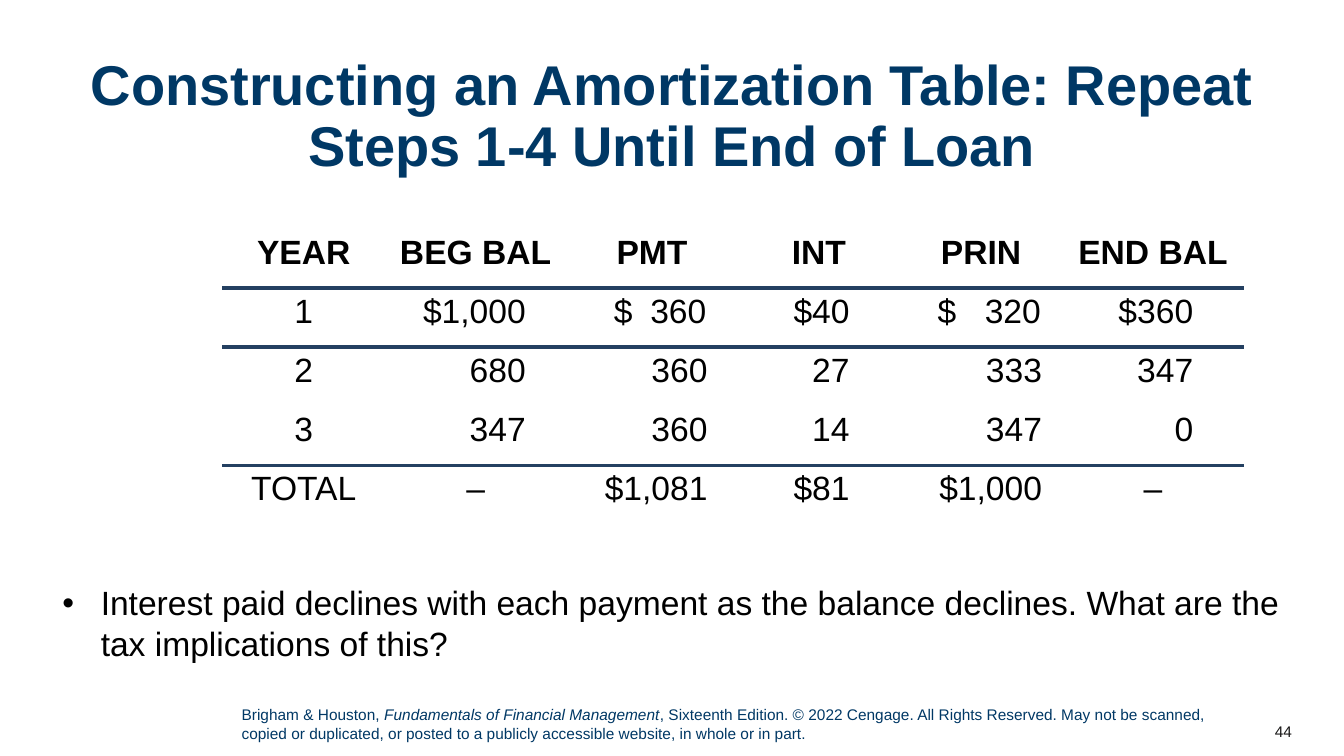
from lxml import etree
from pptx import Presentation
from pptx.dml import color
from pptx.enum import text
from pptx.oxml import ns
from pptx.util import Cm, Pt

COLORS = {"navy": "003865", "rule": "244061", "ink": "000000", "number": "181717"}
LEFT, CENTER, RIGHT = (text.PP_ALIGN.LEFT, text.PP_ALIGN.CENTER, text.PP_ALIGN.RIGHT)

COLUMN_WIDTHS = [4.09, 4.57, 4.32, 4.09, 4.09, 4.57]
RIGHT_INSETS = [0.25, 1.02, 0.76, 1.27, 0.51, 1.27]
DOLLAR_INSETS = {2: 1.2, 4: 0.95}  # where the separate dollar sign starts, by column
ROW_HEIGHT = 1.49
RULED_ROWS = (0, 3)  # rows with a line below them
SCHEDULE = [
    ["YEAR", "BEG BAL", "PMT", "INT", "PRIN", "END BAL"],
    ["1", "$1,000", "$\t360", "$40", "$\t320", "$360"],
    ["2", "680", "360", "27", "333", "347"],
    ["3", "347", "360", "14", "347", "0"],
    ["TOTAL", "–", "$1,081", "$81", "$1,000", "–"],
]


def add_element(parent, tag, **attributes):
    return etree.SubElement(parent, ns.qn(tag), attributes)


def set_attributes(target, values):
    for name, value in values.items():
        setattr(target, name, value)


def add_span(para, words, size, ink, **font_values):
    span = para.add_run()
    span.text = words
    set_attributes(span.font, {"name": "Arial", "size": Pt(size), **font_values})
    span.font.color.rgb = color.RGBColor.from_string(COLORS[ink])


def add_text_box(page, box, **frame_values):
    """Add a wrapping text box and return its first paragraph."""
    frame = page.shapes.add_textbox(*map(Cm, box)).text_frame
    set_attributes(frame, {"word_wrap": True, **frame_values})
    return frame.paragraphs[0]


def add_title(page, box):
    para = add_text_box(page, box)
    set_attributes(para, {"alignment": CENTER, "line_spacing": 0.9})
    add_span(para, "Constructing an Amortization Table: Repeat Steps 1-4 Until End of Loan",
             40, "navy", bold=True)


def add_rule(cell, side):
    properties = cell._tc.get_or_add_tcPr()
    line = etree.Element(ns.qn(f"a:{side}"), w=str(Pt(3)))
    fill = add_element(line, "a:solidFill")
    add_element(fill, "a:srgbClr", val=COLORS["rule"])
    properties.insert(0, line)


def fill_cell(cell, words, row, column):
    para = cell.text_frame.paragraphs[0]
    centered = row == 0 or column == 0 or words == "–"
    para.alignment = CENTER if centered else RIGHT
    if not centered:
        cell.margin_right = Cm(RIGHT_INSETS[column])
    if "\t" in words:
        left = DOLLAR_INSETS[column]
        width = COLUMN_WIDTHS[column] - RIGHT_INSETS[column] - left
        cell.margin_left = Cm(left)
        para.alignment = LEFT
        tabs = add_element(para._p.get_or_add_pPr(), "a:tabLst")
        add_element(tabs, "a:tab", pos=str(Cm(width - 0.03)), algn="r")
    add_span(para, words, 24, "ink", bold=row == 0)
    cell.fill.background()
    if row in RULED_ROWS:
        add_rule(cell, "lnB")
    elif row - 1 in RULED_ROWS:
        add_rule(cell, "lnT")


def add_schedule(page, left, top):
    box = (left, top, sum(COLUMN_WIDTHS), ROW_HEIGHT * len(SCHEDULE))
    table = page.shapes.add_table(len(SCHEDULE), len(COLUMN_WIDTHS), *map(Cm, box)).table
    set_attributes(table, {"first_row": False, "horz_banding": False})
    for column, width in zip(table.columns, COLUMN_WIDTHS):
        column.width = Cm(width)
    for row, entries in enumerate(SCHEDULE):
        table.rows[row].height = Cm(ROW_HEIGHT)
        for column, words in enumerate(entries):
            fill_cell(table.cell(row, column), words, row, column)


def add_question(page, box):
    para = add_text_box(page, box)
    para.space_after = Pt(8)
    properties = para._p.get_or_add_pPr()
    properties.set("marL", str(Cm(0.97)))
    properties.set("indent", str(Cm(-0.97)))
    add_element(properties, "a:buFont", typeface="Arial")
    add_element(properties, "a:buChar", char="•")
    add_span(para, "Interest paid declines with each payment as the balance declines. "
             "What are the tax implications of this?", 24, "ink")


def add_footer(page, box):
    para = add_text_box(page, box)
    add_span(para, "Brigham & Houston, ", 11, "navy")
    add_span(para, "Fundamentals of Financial Management", 11, "navy", italic=True)
    add_span(para, ", Sixteenth Edition. © 2022 Cengage. All Rights Reserved. May not be "
             "scanned, copied or duplicated, or posted to a publicly accessible website, "
             "in whole or in part.", 11, "navy")


def add_page_number(page, box):
    para = add_text_box(page, box, vertical_anchor=text.MSO_ANCHOR.MIDDLE)
    para.alignment = RIGHT
    add_span(para, "44", 11, "number")


def main():
    deck = Presentation()
    set_attributes(deck, {"slide_width": Cm(33.87), "slide_height": Cm(19.05)})
    page = deck.slides.add_slide(deck.slide_layouts[6])
    add_page_number(page, (30.78, 17.91, 2.03, 1.02))
    add_footer(page, (5.84, 17.65, 24.89, 1.19))
    add_title(page, (1.32, 1.32, 31.22, 3.38))
    add_schedule(page, 5.61, 5.77)
    add_question(page, (1.32, 14.55, 31.22, 2.67))
    deck.save("out.pptx")


if __name__ == "__main__":
    main()
